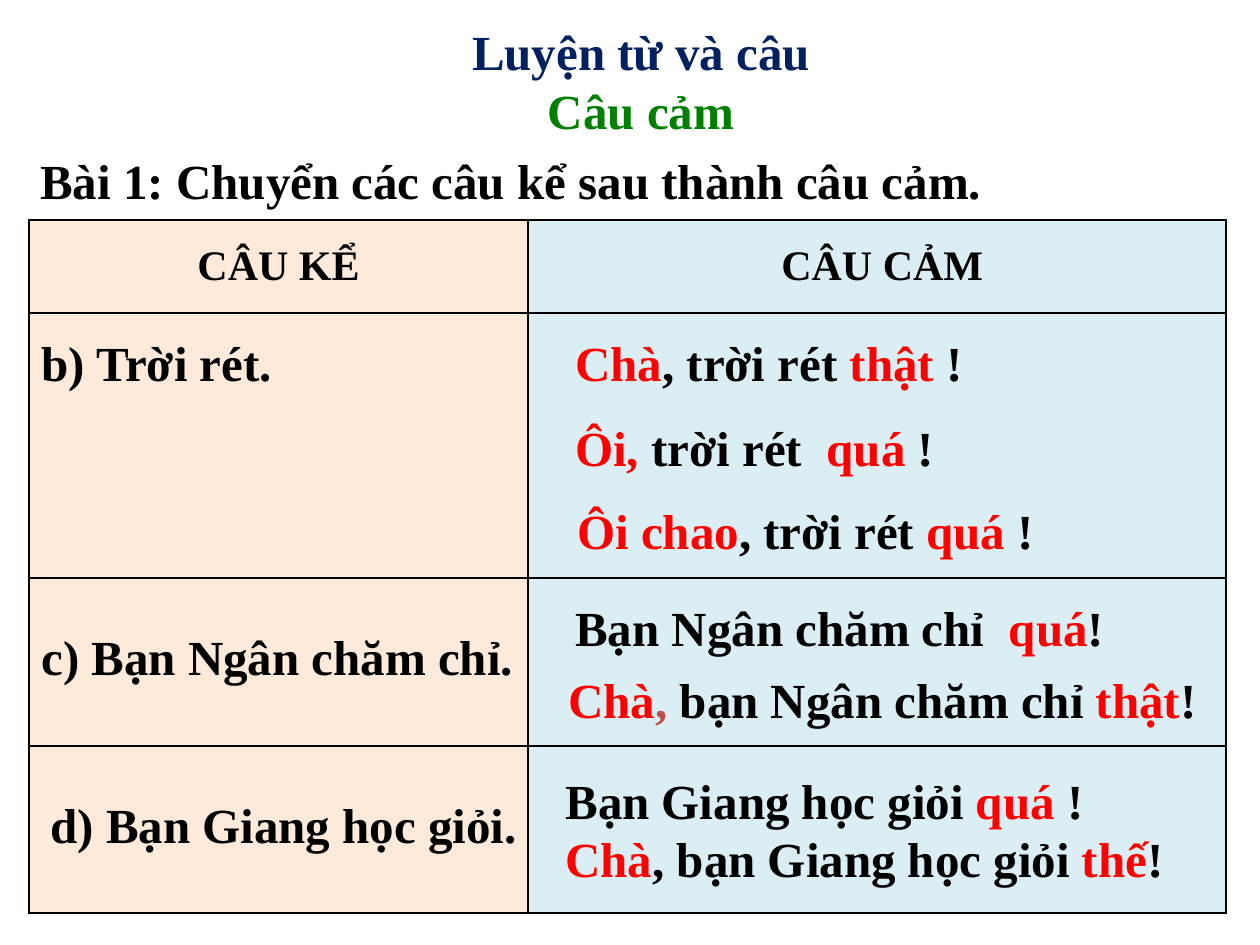
"""Build a Vietnamese grammar slide that turns statements into exclamations."""
from dataclasses import dataclass

from lxml.etree import SubElement
from pptx import Presentation
from pptx.dml.color import RGBColor
from pptx.enum.text import MSO_ANCHOR, MSO_AUTO_SIZE, PP_ALIGN
from pptx.oxml.ns import qn
from pptx.util import Emu, Pt

COLORS = {
    "black": "000000", "red": "FF0000", "brick": "C0504D", "navy": "002060",
    "green": "008000", "peach": "FDEADA", "ice": "DBEEF4",
}
FONT = "Times New Roman"
EMU_PER_PX = 914400 / 126
COLUMNS = (499, 698)
ROWS = (93, 265, 168, 167)
HEADERS = ("CÂU KỂ", " CÂU CẢM")
COLUMN_FILLS = ("peach", "ice")


@dataclass(frozen=True)
class Span:
    text: str
    color: str = "black"


@dataclass(frozen=True)
class Line:
    left: int
    top: int
    width: int
    spans: tuple[Span, ...]
    wrap: bool = True


HEADING = (Span("Luyện từ và câu", "navy"), Span("Câu cảm", "green"))
LINES = (
    Line(28, 144, 1018, (Span("Bài 1: Chuyển các câu kể sau thành câu cảm."),)),
    Line(29, 326, 262, (Span("b) Trời rét."),)),
    Line(563, 326, 420, (Span("Chà", "red"), Span(", trời rét "),
                         Span("thật ", "red"), Span("!"))),
    Line(563, 411, 483, (Span("Ôi, ", "red"), Span("trời rét  "),
                         Span("quá ", "red"), Span("!"))),
    Line(565, 494, 487, (Span("Ôi chao", "red"), Span(", trời rét "),
                         Span("quá", "red"), Span(" !")), False),
    Line(29, 620, 514, (Span("c) Bạn Ngân chăm chỉ."),)),
    Line(563, 591, 577, (Span("Bạn Ngân chăm chỉ  "), Span("quá", "red"), Span("!"))),
    Line(556, 663, 662, (Span("Chà", "red"), Span(", ", "brick"),
                         Span("bạn Ngân chăm chỉ "), Span("thật", "red"), Span("!"))),
    Line(38, 788, 496, (Span("d) Bạn Giang học giỏi."),), False),
    Line(553, 764, 549, (Span("Bạn Giang học giỏi "), Span("quá", "red"),
                         Span(" !")), False),
    Line(553, 822, 631, (Span("Chà", "red"), Span(", bạn Giang học giỏi "),
                         Span("thế", "red"), Span("!")), False),
)


def px(length: int) -> Emu:
    """Turn pixels into EMU."""
    return Emu(round(length * EMU_PER_PX))


def rgb(name: str) -> RGBColor:
    """Look up a named colour."""
    return RGBColor.from_string(COLORS[name])


def add_span(para, span: Span, size: int = 28) -> None:
    """Append one bold run."""
    run = para.add_run()
    run.text = span.text
    run.font.name = FONT
    run.font.size = Pt(size)
    run.font.bold = True
    run.font.color.rgb = rgb(span.color)


def add_heading(page) -> None:
    """Fill the title placeholder with the subject and the topic."""
    title = page.shapes.title
    title.left, title.top, title.width, title.height = map(px, (431, 15, 420, 131))
    frame = title.text_frame
    frame.word_wrap = True
    frame.auto_size = MSO_AUTO_SIZE.SHAPE_TO_FIT_TEXT
    frame.vertical_anchor = MSO_ANCHOR.TOP
    for index, span in enumerate(HEADING):
        para = frame.add_paragraph() if index else frame.paragraphs[0]
        para.alignment = PP_ALIGN.CENTER
        add_span(para, span)


def add_borders(cell) -> None:
    """Draw a thin black line on every side of a cell."""
    properties = cell._tc.get_or_add_tcPr()
    for side in ("lnL", "lnR", "lnT", "lnB"):
        border = SubElement(properties, qn(f"a:{side}"), w=str(Pt(1)))
        fill = SubElement(border, qn("a:solidFill"))
        SubElement(fill, qn("a:srgbClr"), val=COLORS["black"])


def add_grid(page) -> None:
    """Add the two-column table that holds the headers."""
    table = page.shapes.add_table(
        len(ROWS), len(COLUMNS), px(29), px(220), px(sum(COLUMNS)), px(sum(ROWS))
    ).table
    table.first_row = table.horz_banding = False
    for row, height in zip(table.rows, ROWS):
        row.height = px(height)
    for index, width in enumerate(COLUMNS):
        table.columns[index].width = px(width)
        for row in table.rows:
            cell = row.cells[index]
            add_borders(cell)
            cell.fill.solid()
            cell.fill.fore_color.rgb = rgb(COLUMN_FILLS[index])
        header = table.cell(0, index)
        header.vertical_anchor = MSO_ANCHOR.MIDDLE
        para = header.text_frame.paragraphs[0]
        para.alignment = PP_ALIGN.CENTER
        add_span(para, Span(HEADERS[index]), 24)


def add_line(page, line: Line) -> None:
    """Add one sentence as a text box."""
    box = page.shapes.add_textbox(px(line.left), px(line.top), px(line.width), px(72))
    frame = box.text_frame
    frame.word_wrap = line.wrap
    frame.auto_size = MSO_AUTO_SIZE.SHAPE_TO_FIT_TEXT
    for span in line.spans:
        add_span(frame.paragraphs[0], span)


def main() -> None:
    """Build and save the deck."""
    deck = Presentation()
    deck.slide_width, deck.slide_height = px(1260), px(945)
    page = deck.slides.add_slide(deck.slide_layouts[5])
    add_heading(page)
    add_grid(page)
    for line in LINES:
        add_line(page, line)
    deck.save("out.pptx")


if __name__ == "__main__":
    main()
